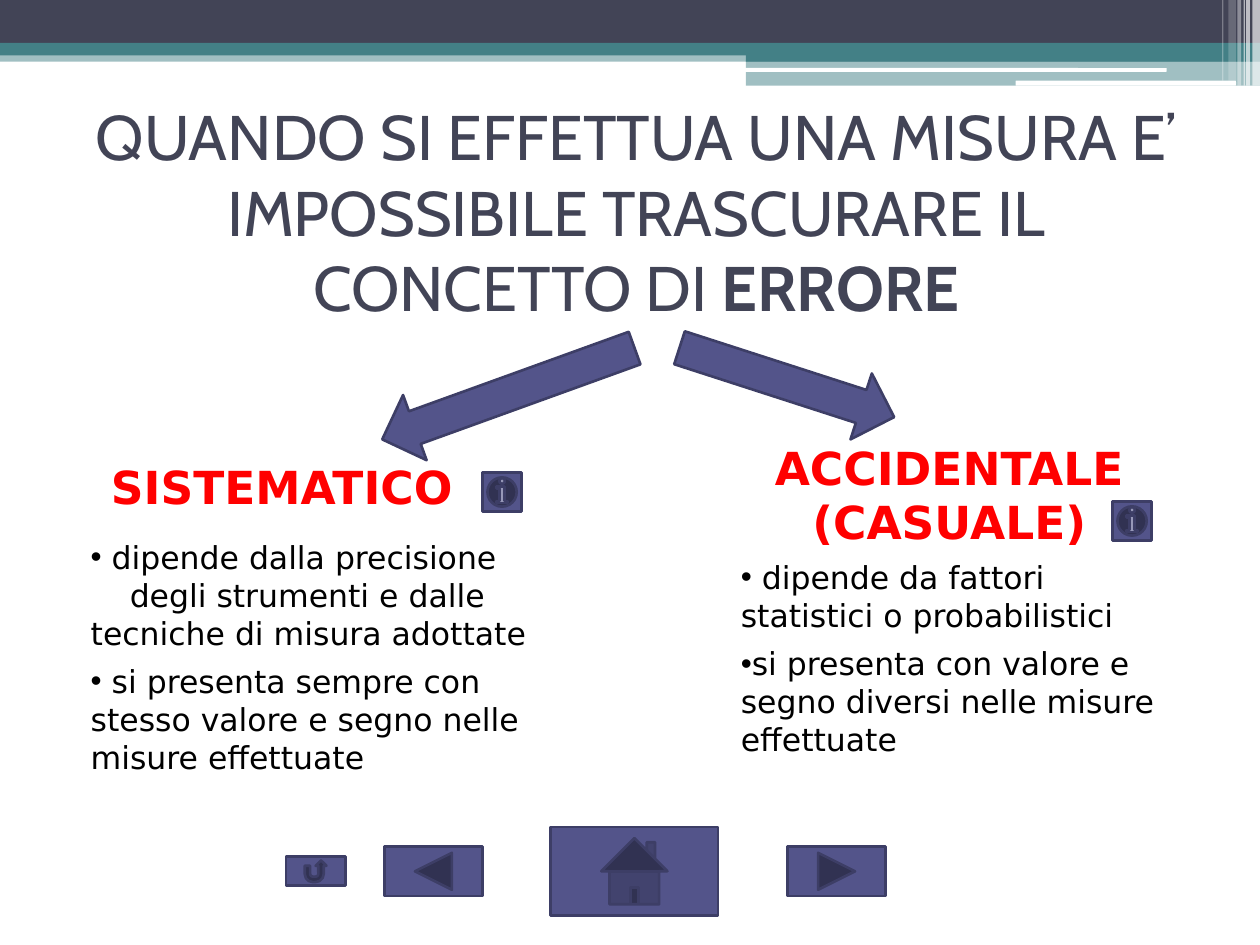
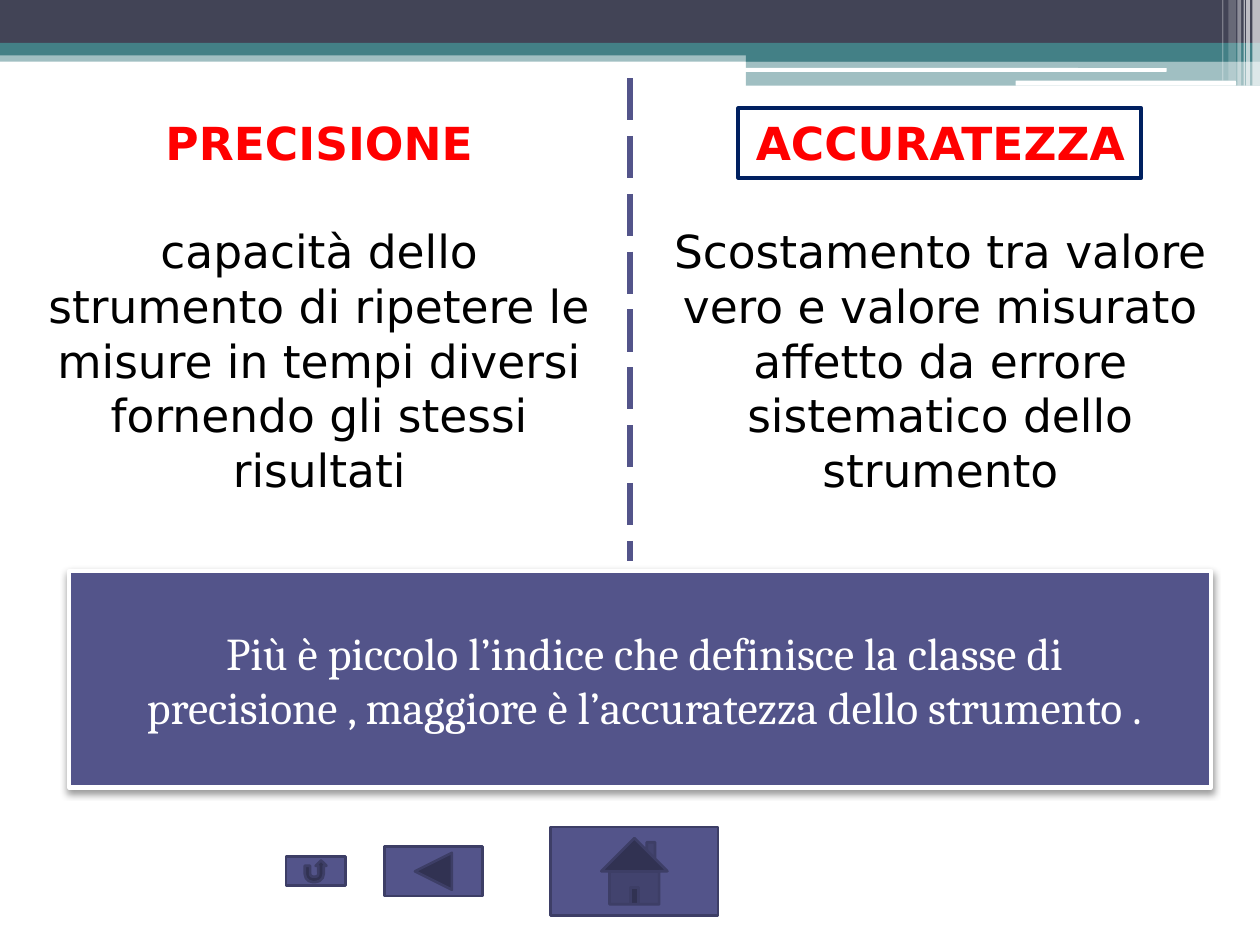
from dataclasses import dataclass
from typing import NamedTuple, Optional

from lxml import etree
from pptx import Presentation
from pptx import util as u
from pptx.dml.color import RGBColor
from pptx.enum import dml, shapes, text
from pptx.oxml.ns import qn

COLUMNS, ROWS = 100, 75
WIDTH, HEIGHT = u.Inches(10), u.Inches(7.5)
Preset = shapes.MSO_SHAPE
Align = text.PP_ALIGN
Anchor = text.MSO_ANCHOR


@dataclass(frozen=True)
class Theme:
    slate: str = "424456"
    teal: str = "438086"
    indigo: str = "53548A"
    indigo_edge: str = "3D3E66"
    navy: str = "002060"
    red: str = "FF0000"
    black: str = "000000"
    white: str = "FFFFFF"
    title_font: str = "Cabin"
    body_font: str = "DejaVu Sans"
    note_font: str = "Cambria"
    title_size: int = 36
    heading_size: int = 26
    list_size: int = 18


THEME = Theme()


class Box(NamedTuple):
    """Left, top, width and height in grid columns and rows."""
    left: float
    top: float
    width: float
    height: float


class Band(NamedTuple):
    box: Box
    color: str
    opacity: int = 100
    preset: Preset = Preset.RECTANGLE


class NavButton(NamedTuple):
    preset: Preset
    left: float
    width: float
    height: float


class Arrow(NamedTuple):
    box: Box
    rotation: float


@dataclass(frozen=True)
class Para:
    words: str
    size: int = THEME.heading_size
    font: str = THEME.body_font
    color: str = THEME.black
    bold: bool = False
    bold_ending: str = ""
    align: Align = Align.CENTER
    before: float = 0
    after: float = 0
    bullet: bool = False
    tab: float = 0


def heading(words: str, **changes) -> Para:
    return Para(words, color=THEME.red, bold=True, **changes)


def item(words: str, **changes) -> Para:
    return Para(words, size=THEME.list_size, align=Align.LEFT, bullet=True, **changes)


def stripe(left: float, width: float, height: float, opacity: int) -> Band:
    return Band(Box(left, 0, width, height), THEME.white, opacity)


BANDS = [
    Band(Box(0, 4, 100, 0.9), THEME.teal, 50),
    Band(Box(0, 0, 100, 3.4), THEME.slate),
    Band(Box(0, 3.4, 100, 1), THEME.teal),
    Band(Box(59.2, 3.9, 40.8, 1), THEME.teal),
    Band(Box(59.2, 4.8, 40.8, 2), THEME.teal, 50),
    Band(Box(59.1, 5.4, 33.5, 0.3), THEME.white, preset=Preset.ROUNDED_RECTANGLE),
    Band(Box(80.6, 6.4, 17.5, 0.4), THEME.white, preset=Preset.ROUNDED_RECTANGLE),
    stripe(99.4, 0.6, 6.8, 65),
    stripe(98.9, 0.3, 6.8, 65),
    stripe(98.7, 0.1, 6.8, 60),
    stripe(98.2, 0.3, 6.8, 40),
    stripe(97.5, 0.6, 6.4, 20),
    stripe(97, 0.1, 6.4, 30),
]

NAV_MIDDLE = 69.15
HOME = NavButton(Preset.ACTION_BUTTON_HOME, 43.7, 13.3, 7)
BACK = NavButton(Preset.ACTION_BUTTON_BACK_OR_PREVIOUS, 30.5, 7.8, 3.9)
RETURN = NavButton(Preset.ACTION_BUTTON_RETURN, 22.7, 4.7, 2.3)
FORWARD = NavButton(Preset.ACTION_BUTTON_FORWARD_OR_NEXT, 62.5, 7.8, 3.9)


def columns(count: float) -> int:
    return round(WIDTH * count / COLUMNS)


def rows(count: float) -> int:
    return round(HEIGHT * count / ROWS)


def emu(box: Box) -> tuple[int, int, int, int]:
    return columns(box.left), rows(box.top), columns(box.width), rows(box.height)


def rgb(color: str) -> RGBColor:
    return RGBColor.from_string(color)


def draw(slide, preset: Preset, box: Box, fill: Optional[str] = None,
         edge: Optional[str] = None, edge_width: float = 1.5):
    shape = slide.shapes.add_shape(preset, *emu(box))
    shape.shadow.inherit = False
    if fill:
        shape.fill.solid()
        shape.fill.fore_color.rgb = rgb(fill)
    else:
        shape.fill.background()
    if edge:
        shape.line.color.rgb = rgb(edge)
        shape.line.width = u.Pt(edge_width)
    else:
        shape.line.fill.background()
    return shape


def draw_indigo(slide, preset: Preset, box: Box):
    return draw(slide, preset, box, THEME.indigo, THEME.indigo_edge)


def set_opacity(color_element, percent: int) -> None:
    etree.SubElement(color_element, qn("a:alpha"), val=str(percent * 1000))


def cast_shadow(shape) -> None:
    effects = shape.element.spPr.find(qn("a:effectLst"))
    shadow = etree.SubElement(effects, qn("a:outerShdw"), blurRad=str(u.Pt(4.1)),
                              dist=str(u.Pt(2)), dir=str(90 * 60000), rotWithShape="0")
    set_opacity(etree.SubElement(shadow, qn("a:srgbClr"), val=THEME.black), 40)


def set_list_format(paragraph, para: Para) -> None:
    props = paragraph._p.get_or_add_pPr()
    props.set("marL", "0")
    props.set("indent", "0")
    if para.bullet:
        etree.SubElement(props, qn("a:buChar"), char="•")
    else:
        etree.SubElement(props, qn("a:buNone"))
    if para.tab:
        stops = etree.SubElement(props, qn("a:tabLst"))
        etree.SubElement(stops, qn("a:tab"), pos=str(columns(para.tab)), algn="l")
    for line_break in paragraph._p.findall(qn("a:br")):
        etree.SubElement(line_break, qn("a:rPr"), sz=str(para.size * 100))


def write(shape, paras: list[Para], anchor: Anchor = Anchor.TOP) -> None:
    frame = shape.text_frame
    frame.word_wrap = True
    frame.auto_size = text.MSO_AUTO_SIZE.NONE
    frame.vertical_anchor = anchor
    for number, para in enumerate(paras):
        paragraph = frame.add_paragraph() if number else frame.paragraphs[0]
        paragraph.text = para.words
        ending = paragraph.add_run() if para.bold_ending else None
        set_list_format(paragraph, para)
        paragraph.alignment = para.align
        paragraph.space_before = u.Pt(para.before)
        paragraph.space_after = u.Pt(para.after)
        for font in [paragraph.font, *(run.font for run in paragraph.runs)]:
            font.name = para.font
            font.size = u.Pt(para.size)
            font.bold = para.bold
            font.color.rgb = rgb(para.color)
        if ending:
            ending.text = para.bold_ending
            ending.font.bold = True


def fill_placeholder(slide, index: int, box: Box, paras: list[Para],
                     anchor: Anchor = Anchor.TOP) -> None:
    placeholder = slide.placeholders[index]
    placeholder.left, placeholder.top, placeholder.width, placeholder.height = emu(box)
    write(placeholder, paras, anchor)


def move_bands_to_master(prs, slide) -> None:
    """Draw the header bands and place them behind everything on the master."""
    tree = prs.slide_master.shapes.element
    for number, band in enumerate(BANDS):
        shape = draw(slide, band.preset, band.box, band.color)
        if band.opacity < 100:
            set_opacity(shape.element.spPr.find(f".//{qn('a:srgbClr')}"), band.opacity)
        shape.element.nvSpPr.cNvPr.set("id", str(100 + number))
        tree.insert(2 + number, shape.element)


def add_navigation(slide, buttons: list[NavButton]) -> None:
    for button in buttons:
        top = NAV_MIDDLE - button.height / 2
        draw_indigo(slide, button.preset,
                    Box(button.left, top, button.width, button.height))


def build_errors(slide) -> None:
    fill_placeholder(slide, 0, Box(5.5, 10.9, 90, 11.7), [
        Para("QUANDO SI EFFETTUA UNA MISURA E’ IMPOSSIBILE TRASCURARE IL CONCETTO DI ",
             size=THEME.title_size, font=THEME.title_font, color=THEME.slate,
             bold_ending="ERRORE")], Anchor.MIDDLE)
    fill_placeholder(slide, 1, Box(7.8, 35.9, 31.3, 5.4),
                     [heading("SISTEMATICO", align=Align.LEFT)])
    fill_placeholder(slide, 2, Box(6.2, 42.2, 36.7, 20), [
        item(" dipende dalla precisione\v\tdegli strumenti e dalle "
             "tecniche di misura adottate", tab=3.1),
        item(" si presenta sempre con stesso valore e segno nelle misure effettuate",
             before=6)])
    fill_placeholder(slide, 3, Box(57, 34.4, 36.7, 9.8),
                     [heading("ACCIDENTALE (CASUALE)")])
    fill_placeholder(slide, 4, Box(57.8, 43.8, 36.7, 17), [
        item(" dipende da fattori statistici o probabilistici", after=6),
        item("si presenta con valore e segno diversi nelle misure effettuate")])

    for arrow in [Arrow(Box(37.6, 20.6, 5.5, 21.3), 70.1),
                  Arrow(Box(59.7, 21.4, 5.5, 17.9), 287.9)]:
        draw_indigo(slide, Preset.DOWN_ARROW, arrow.box).rotation = arrow.rotation
    add_navigation(slide, [HOME, BACK, RETURN, FORWARD])
    for left, top in [(38.3, 37.5), (88.3, 39.8)]:
        draw_indigo(slide, Preset.ACTION_BUTTON_INFORMATION, Box(left, top, 3.1, 3.1))


def build_precision(slide) -> None:
    title = slide.shapes.title.element
    title.getparent().remove(title)
    definitions = [
        ("PRECISIONE", "capacità dello strumento di ripetere le misure in tempi "
                       "diversi fornendo gli stessi risultati"),
        ("ACCURATEZZA", "Scostamento tra valore vero e valore misurato affetto da "
                        "errore sistematico dello strumento"),
    ]
    for number, (term, meaning) in enumerate(definitions):
        fill_placeholder(slide, number + 1, Box(2.3 + 49.3 * number, 8.6, 46.1, 31.6),
                         [heading(term, after=31), Para(meaning)])

    divider = slide.shapes.add_connector(shapes.MSO_CONNECTOR.STRAIGHT, columns(50),
                                         rows(6.2), columns(50), rows(44.5))
    divider.line.color.rgb = rgb(THEME.indigo)
    divider.line.width = u.Pt(3)
    divider.line.dash_style = dml.MSO_LINE.LONG_DASH
    etree.SubElement(divider.element.spPr, qn("a:effectLst"))

    draw(slide, Preset.RECTANGLE, Box(58.6, 8.6, 32, 5.5), None, THEME.navy, 2.25)
    note = draw(slide, Preset.RECTANGLE, Box(5.5, 45.3, 90.6, 17.2),
                THEME.indigo, THEME.white, 2.5)
    cast_shadow(note)
    note.text_frame.margin_left, note.text_frame.margin_right = columns(4.9), columns(4.1)
    write(note, [Para("Più è piccolo l’indice che definisce la classe di precisione , "
                      "maggiore è l’accuratezza dello strumento .",
                      font=THEME.note_font, color=THEME.white)], Anchor.MIDDLE)
    add_navigation(slide, [HOME, BACK, RETURN])


def main() -> None:
    prs = Presentation()
    prs.slide_width, prs.slide_height = WIDTH, HEIGHT
    comparison = prs.slide_layouts.get_by_name("Comparison")
    two_content = prs.slide_layouts.get_by_name("Two Content")
    errors = prs.slides.add_slide(comparison)
    move_bands_to_master(prs, errors)
    build_errors(errors)
    build_precision(prs.slides.add_slide(two_content))
    prs.save("out.pptx")


if __name__ == "__main__":
    main()
